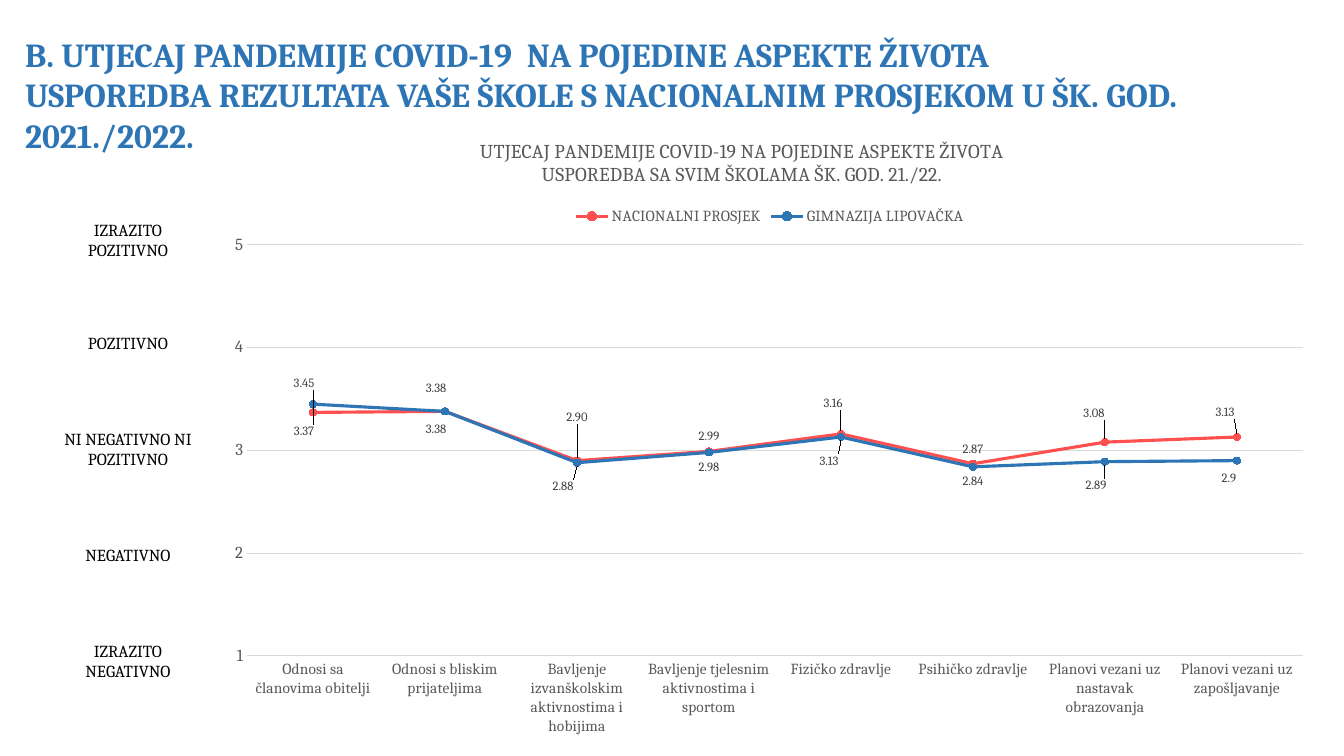
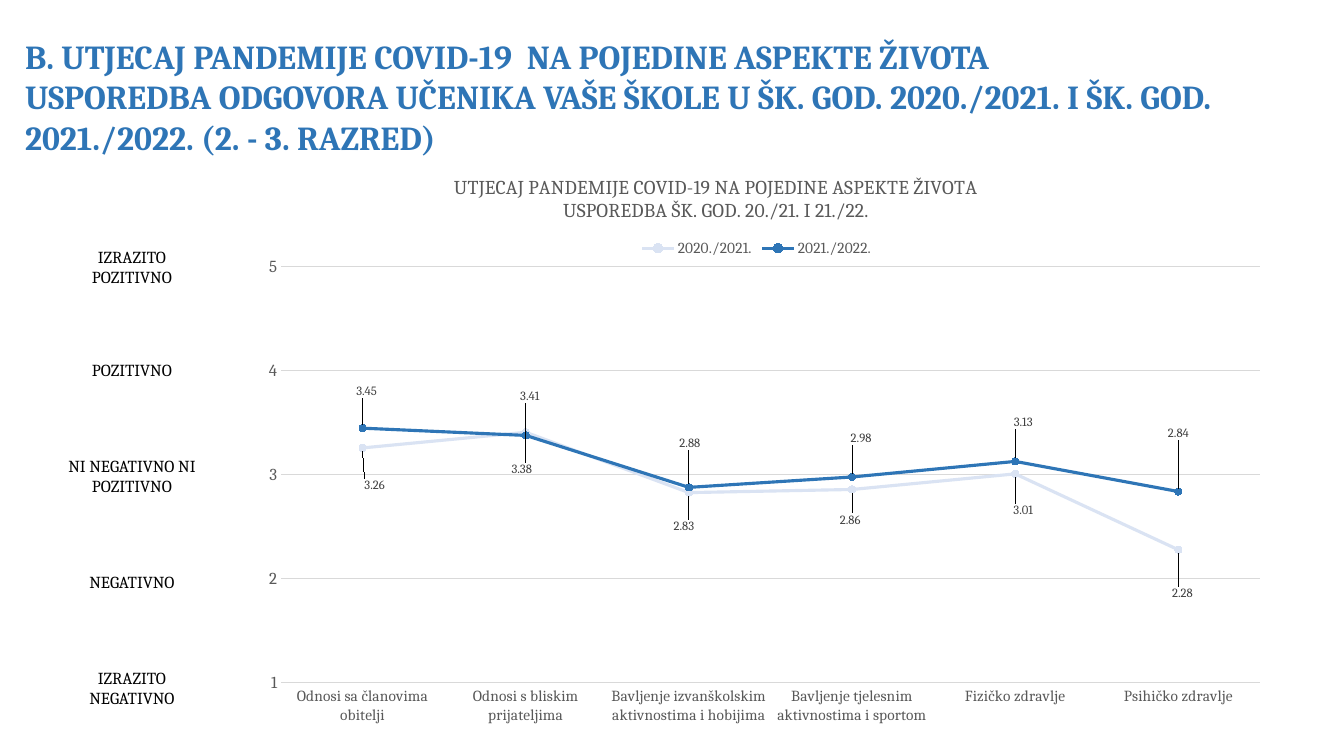
from dataclasses import dataclass
from typing import NamedTuple

from lxml.etree import SubElement as Sub
from pptx import Presentation
from pptx.chart.data import CategoryChartData as ChartData
from pptx.dml.color import RGBColor
from pptx.enum.chart import XL_CHART_TYPE as Kind
from pptx.enum.chart import XL_LABEL_POSITION as Side
from pptx.enum.chart import XL_LEGEND_POSITION as Legend
from pptx.enum.chart import XL_MARKER_STYLE as Dot
from pptx.enum.chart import XL_TICK_MARK as Tick
from pptx.enum.text import MSO_ANCHOR as Anchor
from pptx.enum.text import MSO_AUTO_SIZE as Auto
from pptx.enum.text import PP_ALIGN as Align
from pptx.oxml import parse_xml
from pptx.oxml.ns import nsdecls, qn
from pptx.util import Emu, Pt

SCALE = 914400 / 100.8
FONT = "Cambria"
HEX = {
    "blue": "2E75B6",
    "red": "FF5050",
    "pale": "DAE3F3",
    "black": "000000",
    "gray": "595959",
    "dark": "404040",
    "grid": "D9D9D9",
}
HEAD = "B. UTJECAJ PANDEMIJE COVID-19  NA POJEDINE ASPEKTE ŽIVOTA"
TOPIC = "UTJECAJ PANDEMIJE COVID-19 NA POJEDINE ASPEKTE ŽIVOTA"
GRADES = [
    "IZRAZITO POZITIVNO",
    "POZITIVNO",
    "NI NEGATIVNO NI POZITIVNO",
    "NEGATIVNO",
    "IZRAZITO NEGATIVNO",
]
GAPS = [0, 52, 54, 54, 54]
CATS = [
    "Odnosi sa članovima obitelji",
    "Odnosi s bliskim prijateljima",
    "Bavljenje izvanškolskim aktivnostima i hobijima",
    "Bavljenje tjelesnim aktivnostima i sportom",
    "Fizičko zdravlje",
    "Psihičko zdravlje",
    "Planovi vezani uz nastavak obrazovanja",
    "Planovi vezani uz zapošljavanje",
]


class Box(NamedTuple):
    x: int
    y: int
    w: int
    h: int


@dataclass
class Line:
    name: str
    color: str
    vals: list[float]
    side: Side
    form: str
    moves: dict[int, tuple[int, int]]


@dataclass
class Page:
    sub: str
    note: str
    head: Box
    list: Box
    chart: Box
    plot: Box
    title: tuple[int, int]
    legend: tuple[int, int]
    lines: list[Line]


PAGES = [
    Page(
        "USPOREDBA REZULTATA VAŠE ŠKOLE S NACIONALNIM PROSJEKOM U ŠK. GOD. 2021./2022.",
        "USPOREDBA SA SVIM ŠKOLAMA ŠK. GOD. 21./22.",
        Box(15, 29, 1329, 132), Box(54, 215, 148, 475),
        Box(217, 118, 1112, 625), Box(30, 127, 1056, 411),
        (260, 18), (354, 85),
        [
            Line("NACIONALNI PROSJEK", "red",
                 [3.37, 3.38, 2.9, 2.99, 3.16, 2.87, 3.08, 3.13],
                 Side.ABOVE, "0.00",
                 {0: (-9, 34), 1: (-9, -8), 2: (0, -29), 4: (-8, -16),
                  6: (-11, -14), 7: (-12, -10)}),
            Line("GIMNAZIJA LIPOVAČKA", "blue",
                 [3.45, 3.38, 2.88, 2.98, 3.13, 2.84, 2.89, 2.9],
                 Side.BELOW, "General",
                 {0: (-9, -36), 1: (-9, 3), 2: (-14, 9), 4: (-12, 9),
                  6: (-9, 9), 7: (-8, 3)}),
        ],
    ),
    Page(
        "USPOREDBA ODGOVORA UČENIKA VAŠE ŠKOLE U ŠK. GOD. 2020./2021. I ŠK. GOD. 2021./2022. (2. - 3. RAZRED)",
        "USPOREDBA ŠK. GOD. 20./21. I 21./22.",
        Box(15, 31, 1329, 132), Box(56, 242, 152, 476),
        Box(216, 155, 1095, 624), Box(65, 112, 979, 416),
        (235, 17), (421, 80),
        [
            Line("2020./2021.", "pale",
                 [3.26, 3.41, 2.83, 2.86, 3.01, 2.28],
                 Side.BELOW, "###0.00",
                 {0: (12, 23), 1: (4, -51), 2: (-5, 19), 3: (-2, 16),
                  4: (8, 22), 5: (4, 29)}),
            Line("2021./2022.", "blue",
                 [3.45, 3.38, 2.88, 2.98, 3.13, 2.84],
                 Side.ABOVE, "General",
                 {0: (4, -22), 1: (-4, 49), 2: (1, -29), 3: (9, -24),
                  4: (8, -24), 5: (0, -44)}),
        ],
    ),
]


def px(num: int) -> Emu:
    return Emu(round(num * SCALE))


def rgb(name: str) -> RGBColor:
    return RGBColor.from_string(HEX[name])


def style(font, size: int, color: str, bold: bool = False) -> None:
    font.name = FONT
    font.size = Pt(size)
    font.bold = bold
    font.color.rgb = rgb(color)


def write(frame, lines: list[str], *, size: int, color: str, bold: bool = False,
          align: Align = Align.LEFT, gaps: list[int] | None = None) -> None:
    frame.text = "\n".join(lines)
    for para, gap in zip(frame.paragraphs, gaps or [0] * len(lines)):
        para.alignment = align
        para.space_before = Pt(gap)
        para.line_spacing = 1.0
        for run in para.runs:
            style(run.font, size, color, bold)


def place(shape, box: Box, side: int):
    shape.left, shape.top, shape.width, shape.height = map(px, box)
    frame = shape.text_frame
    frame.word_wrap = True
    frame.auto_size = Auto.NONE
    frame.vertical_anchor = Anchor.TOP
    frame.margin_left = frame.margin_right = px(side)
    frame.margin_top = frame.margin_bottom = px(5)
    return frame


def plain(frame) -> None:
    for para in frame.paragraphs:
        props = para._p.get_or_add_pPr()
        props.set("marL", "0")
        props.set("indent", "0")
        Sub(props, qn("a:buNone"))


def layout(node, prev: str, spot: tuple, area: Box, edge: bool = True) -> None:
    for old in node.findall(qn("c:layout")):
        node.remove(old)
    new = parse_xml(f"<c:layout {nsdecls('c')}><c:manualLayout/></c:layout>")
    man = new[0]
    if len(spot) == 4:
        Sub(man, qn("c:layoutTarget"), val="inner")
    if edge:
        for key in ("xMode", "yMode"):
            Sub(man, qn(f"c:{key}"), val="edge")
    for key, num, full in zip("xywh", spot, (area.w, area.h) * 2):
        Sub(man, qn(f"c:{key}"), val=f"{num / full:.4f}")
    if prev:
        node.find(qn(prev)).addnext(new)
    else:
        node.insert(0, new)


def trace(ser, line: Line, area: Box) -> None:
    ser.smooth = False
    ser.format.line.color.rgb = rgb(line.color)
    ser.format.line.width = Pt(2.25)
    ser.marker.style = Dot.CIRCLE
    ser.marker.size = 5
    for part in (ser.marker.format.fill, ser.marker.format.line.fill):
        part.solid()
        part.fore_color.rgb = rgb(line.color)
    tags = ser.data_labels
    tags.show_value = True
    tags.position = line.side
    tags.number_format = line.form
    tags.number_format_is_linked = False
    style(tags.font, 9, "dark")
    for idx, move in line.moves.items():
        tag = ser.points[idx].data_label
        tag.position = line.side
        style(tag.font, 9, "dark")
        node = ser._element.xpath(f"c:dLbls/c:dLbl[c:idx/@val='{idx}']")[0]
        layout(node, "c:idx", move, area, edge=False)
        form = parse_xml(f'<c:numFmt {nsdecls("c")} formatCode="{line.form}" sourceLinked="0"/>')
        node.find(qn("c:layout")).addnext(form)


def graph(slide, page: Page) -> None:
    area = page.chart
    data = ChartData()
    data.categories = CATS[:len(page.lines[0].vals)]
    for line in page.lines:
        data.add_series(line.name, line.vals)
    chart = slide.shapes.add_chart(Kind.LINE_MARKERS, *map(px, area), data).chart
    style(chart.font, 10, "black")

    chart.has_title = True
    write(chart.chart_title.text_frame, [TOPIC, page.note],
          size=14, color="gray", align=Align.CENTER)
    layout(chart.chart_title._element, "c:tx", page.title, area)

    chart.has_legend = True
    chart.legend.position = Legend.TOP
    chart.legend.include_in_layout = False
    style(chart.legend.font, 11, "gray")
    layout(chart.legend._element, "c:legendPos", page.legend, area)
    layout(chart._chartSpace.chart.plotArea, "", page.plot, area)

    cat, val = chart.category_axis, chart.value_axis
    for axis, size in ((cat, 11), (val, 12)):
        axis.major_tick_mark = axis.minor_tick_mark = Tick.NONE
        style(axis.tick_labels.font, size, "gray")
    val.minimum_scale, val.maximum_scale, val.major_unit = 1, 5, 1
    val.tick_labels.number_format = "0"
    val.tick_labels.number_format_is_linked = False
    val.format.line.fill.background()
    val.has_major_gridlines = True
    for rule in (cat.format.line, val.major_gridlines.format.line):
        rule.color.rgb = rgb("grid")
        rule.width = Pt(0.75)

    plot = chart.plots[0]
    plot.vary_by_categories = False
    for ser, line in zip(plot.series, page.lines):
        trace(ser, line, area)


def build(deck, page: Page) -> None:
    slide = deck.slides.add_slide(deck.slide_layouts[1])
    head = place(slide.shapes.title, page.head, 10)
    write(head, [HEAD, page.sub], size=24, color="blue", bold=True)
    body = place(slide.placeholders[1], page.list, 8)
    write(body, GRADES, size=12, color="black", align=Align.CENTER, gaps=GAPS)
    plain(body)
    graph(slide, page)


def main() -> None:
    deck = Presentation()
    deck.slide_width, deck.slide_height = px(1344), px(756)
    for page in PAGES:
        build(deck, page)
    deck.save("out.pptx")


if __name__ == "__main__":
    main()
